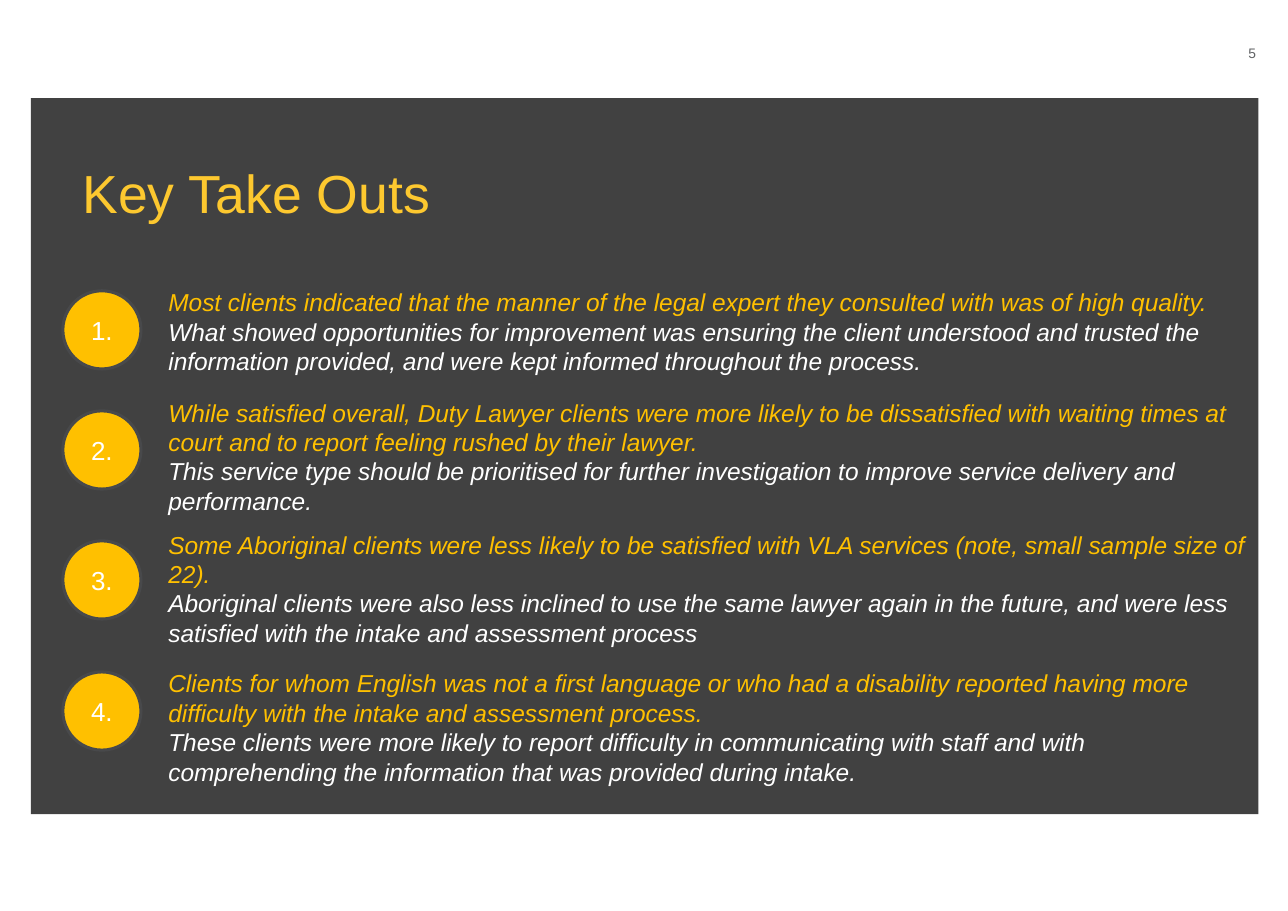
from dataclasses import dataclass

from pptx import Presentation
from pptx import util as u
from pptx.dml.color import RGBColor
from pptx.enum import shapes, text


@dataclass(frozen=True)
class Theme:
    """Slide size in inches, font, colours and type sizes."""
    width: float = 11.69
    height: float = 8.27
    font: str = "Arial"
    panel: str = "414141"
    title: str = "FDC82F"
    accent: str = "FFC000"
    ring: str = "48494B"
    light: str = "FFFFFF"
    muted: str = "616365"
    title_size: float = 35
    body_size: float = 16
    badge_size: float = 17
    number_size: float = 9


THEME = Theme()

TAKE_OUTS = [
    (31.92, 30.96,
     "Most clients indicated that the manner of the legal expert they consulted with was of high quality.",
     "What showed opportunities for improvement was ensuring the client understood and trusted the "
     "information provided, and were kept informed throughout the process."),
    (45.1, 43.05,
     "While satisfied overall, Duty Lawyer clients were more likely to be dissatisfied with waiting times "
     "at court and to report feeling rushed by their lawyer.",
     "This service type should be prioritised for further investigation to improve service delivery and "
     "performance."),
    (59.37, 57.56,
     "Some Aboriginal clients were less likely to be satisfied with VLA services (note, small sample size "
     "of 22).",
     "Aboriginal clients were also less inclined to use the same lawyer again in the future, and were less "
     "satisfied with the intake and assessment process"),
    (73.76, 72.79,
     "Clients for whom English was not a first language or who had a disability reported having more "
     "difficulty with the intake and assessment process.",
     "These clients were more likely to report difficulty in communicating with staff and with "
     "comprehending the information that was provided during intake."),
]


def place(left, top, width, height):
    """Turn percentages of the slide's size into lengths."""
    across, down = THEME.width / 100, THEME.height / 100
    return [u.Inches(n) for n in (left * across, top * down, width * across, height * down)]


def style(paragraph, size, colour, italic=False, align=text.PP_ALIGN.LEFT):
    """Set the font and alignment of a paragraph."""
    paragraph.alignment = align
    font = paragraph.font
    font.name, font.size, font.italic = THEME.font, u.Pt(size), italic
    font.color.rgb = RGBColor.from_string(colour)


def add_filled(slide, kind, box, colour):
    """Add a flat preset shape without an outline."""
    shape = slide.shapes.add_shape(kind, *place(*box))
    shape.shadow.inherit = False
    shape.fill.solid()
    shape.fill.fore_color.rgb = RGBColor.from_string(colour)
    shape.line.fill.background()
    return shape


def add_text(slide, box, lines, size, anchor=text.MSO_ANCHOR.TOP, **options):
    """Add a wrapping text box of (wording, colour) paragraphs."""
    frame = slide.shapes.add_textbox(*place(*box)).text_frame
    frame.word_wrap = True
    frame.vertical_anchor = anchor
    frame.text = "\n".join(wording for wording, _ in lines)
    for paragraph, (_, colour) in zip(frame.paragraphs, lines):
        style(paragraph, size, colour, **options)
    return frame


def add_badge(slide, top, number):
    """Add a numbered circle in the left column."""
    badge = add_filled(slide, shapes.MSO_SHAPE.OVAL, (4.88, top, 6.07, 8.59), THEME.accent)
    badge.line.color.rgb = RGBColor.from_string(THEME.ring)
    badge.line.width = u.Pt(2)
    frame = badge.text_frame
    frame.text = f"{number}."
    frame.vertical_anchor = text.MSO_ANCHOR.MIDDLE
    style(frame.paragraphs[0], THEME.badge_size, THEME.light, align=text.PP_ALIGN.CENTER)


def add_page_number(slide, number):
    """Add the page number at the top right."""
    frame = add_text(slide, (91.36, 4.72, 6.16, 2.3), [(number, THEME.muted)], THEME.number_size,
                     text.MSO_ANCHOR.MIDDLE, align=text.PP_ALIGN.RIGHT)
    frame.margin_left = frame.margin_right = frame.margin_top = frame.margin_bottom = 0


def main():
    """Build the slide and save it."""
    presentation = Presentation()
    presentation.slide_width = u.Inches(THEME.width)
    presentation.slide_height = u.Inches(THEME.height)
    slide = presentation.slides.add_slide(presentation.slide_layouts[6])
    add_filled(slide, shapes.MSO_SHAPE.RECTANGLE, (2.4, 10.76, 95.3, 78.6), THEME.panel)
    title = add_text(slide, (5.56, 13.3, 42.6, 16.69), [("Key Take Outs", THEME.title)],
                     THEME.title_size, text.MSO_ANCHOR.MIDDLE)
    title.paragraphs[0].line_spacing = 0.85
    add_page_number(slide, "5")
    for number, (badge_top, text_top, finding, detail) in enumerate(TAKE_OUTS, 1):
        add_text(slide, (12.23, text_top, 85.54, 15.24),
                 [(finding, THEME.accent), (detail, THEME.light)], THEME.body_size, italic=True)
        add_badge(slide, badge_top, number)
    presentation.save("out.pptx")


if __name__ == "__main__":
    main()
